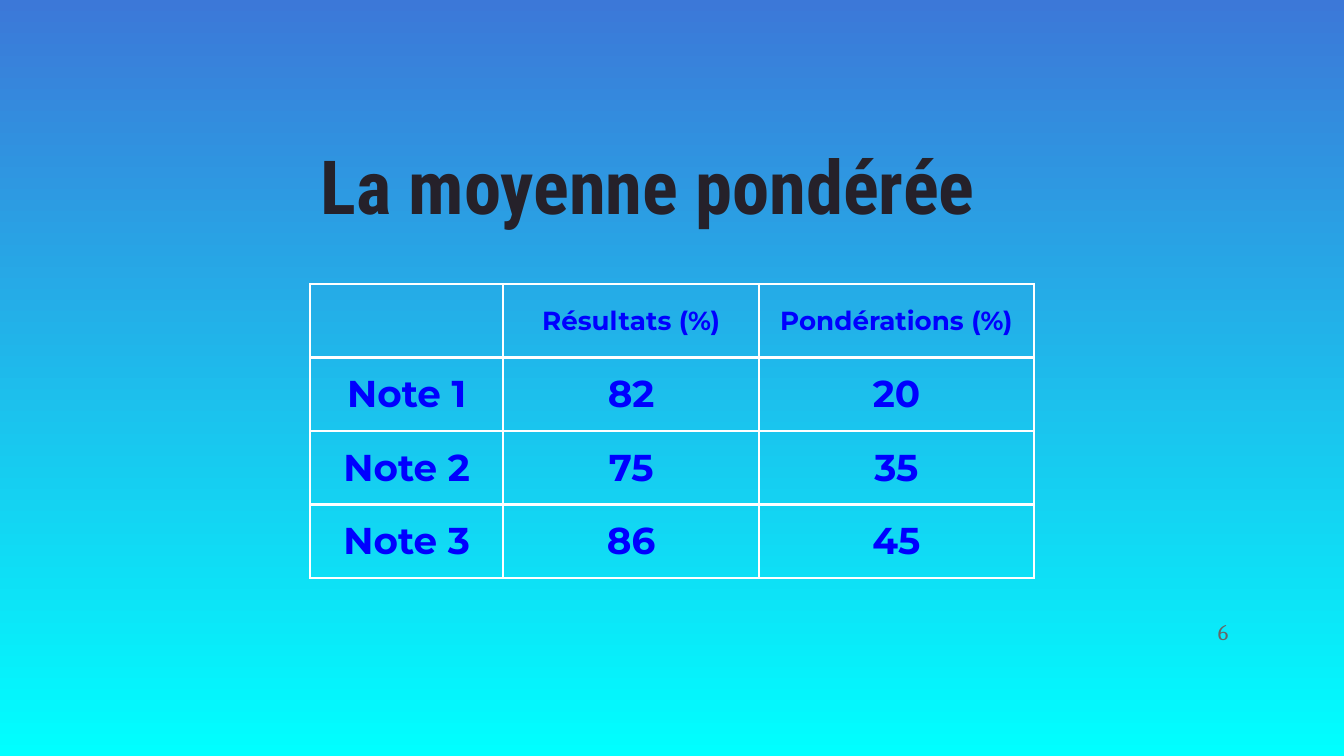
"""Build the weighted average slide with its table of marks."""
from dataclasses import dataclass

from lxml.etree import SubElement
from pptx import Presentation
from pptx.dml.color import RGBColor
from pptx.enum.text import MSO_ANCHOR, PP_ALIGN
from pptx.oxml.ns import qn
from pptx.util import Pt


@dataclass
class Theme:
    top: str = "3C78D8"
    base: str = "00FFFF"
    ink: str = "25212A"
    blue: str = "0000FF"
    grey: str = "666666"
    rule: str = "FFFFFF"
    title: int = 40
    space: int = 48
    head: int = 14
    body: int = 20
    page: int = 12


def put(obj, **vals):
    for key, val in vals.items():
        setattr(obj, key, val)


def write(par, text, face, size, tint, bold=False):
    run = par.add_run()
    run.text = text
    put(run.font, name=face, size=Pt(size), bold=bold)
    run.font.color.rgb = RGBColor.from_string(tint)


look = Theme()
deck = Presentation()
put(deck, slide_width=Pt(720), slide_height=Pt(405))
slide = deck.slides.add_slide(deck.slide_layouts[6])

fill = slide.background.fill
fill.gradient()
fill.gradient_angle = 270
for stop, tint, spot in zip(fill.gradient_stops, (look.top, look.base), (0, 1)):
    stop.color.rgb = RGBColor.from_string(tint)
    stop.position = spot

sides = ("margin_left", "margin_right", "margin_top", "margin_bottom")
boxes = [
    ((108, 40.3, 489, 91.5), MSO_ANCHOR.BOTTOM, PP_ALIGN.CENTER,
     [("La moyenne pondérée", "Roboto Condensed", look.title, look.ink, True),
      (" ", "Roboto Condensed", look.space, look.ink, True)]),
    ((622, 322.6, 43.2, 31), MSO_ANCHOR.MIDDLE, PP_ALIGN.RIGHT,
     [("6", "Cambria", look.page, look.grey)]),
]
for place, anchor, align, runs in boxes:
    frame = slide.shapes.add_textbox(*map(Pt, place)).text_frame
    put(frame, word_wrap=True, vertical_anchor=anchor, **dict.fromkeys(sides, Pt(7.2)))
    par = frame.paragraphs[0]
    par.alignment = align
    for run in runs:
        write(par, *run)

rows = [
    ("", "Résultats (%)", "Pondérations (%)"),
    ("Note 1", "82", "20"),
    ("Note 2", "75", "35"),
    ("Note 3", "86", "45"),
]
wides = (103.4, 137.1, 147.2)
high = 39.4
place = (166.2, 152.2, sum(wides), high * len(rows))
grid = slide.shapes.add_table(len(rows), len(wides), *map(Pt, place)).table
put(grid, first_row=False, horz_banding=False)
for col, wide in zip(grid.columns, wides):
    col.width = Pt(wide)

for r, row in enumerate(rows):
    grid.rows[r].height = Pt(high)
    size = look.body if r else look.head
    for c, text in enumerate(row):
        cell = grid.cell(r, c)
        put(cell, vertical_anchor=MSO_ANCHOR.MIDDLE, **dict.fromkeys(sides, Pt(5)))
        props = cell._tc.get_or_add_tcPr()
        for edge in ("a:lnL", "a:lnR", "a:lnT", "a:lnB"):
            line = SubElement(props, qn(edge), w=str(Pt(1.5)))
            SubElement(SubElement(line, qn("a:solidFill")), qn("a:srgbClr"), val=look.rule)
        cell.fill.background()
        par = cell.text_frame.paragraphs[0]
        par.alignment = PP_ALIGN.CENTER
        if text:
            write(par, text, "Montserrat", size, look.blue, True)

deck.save("out.pptx")
